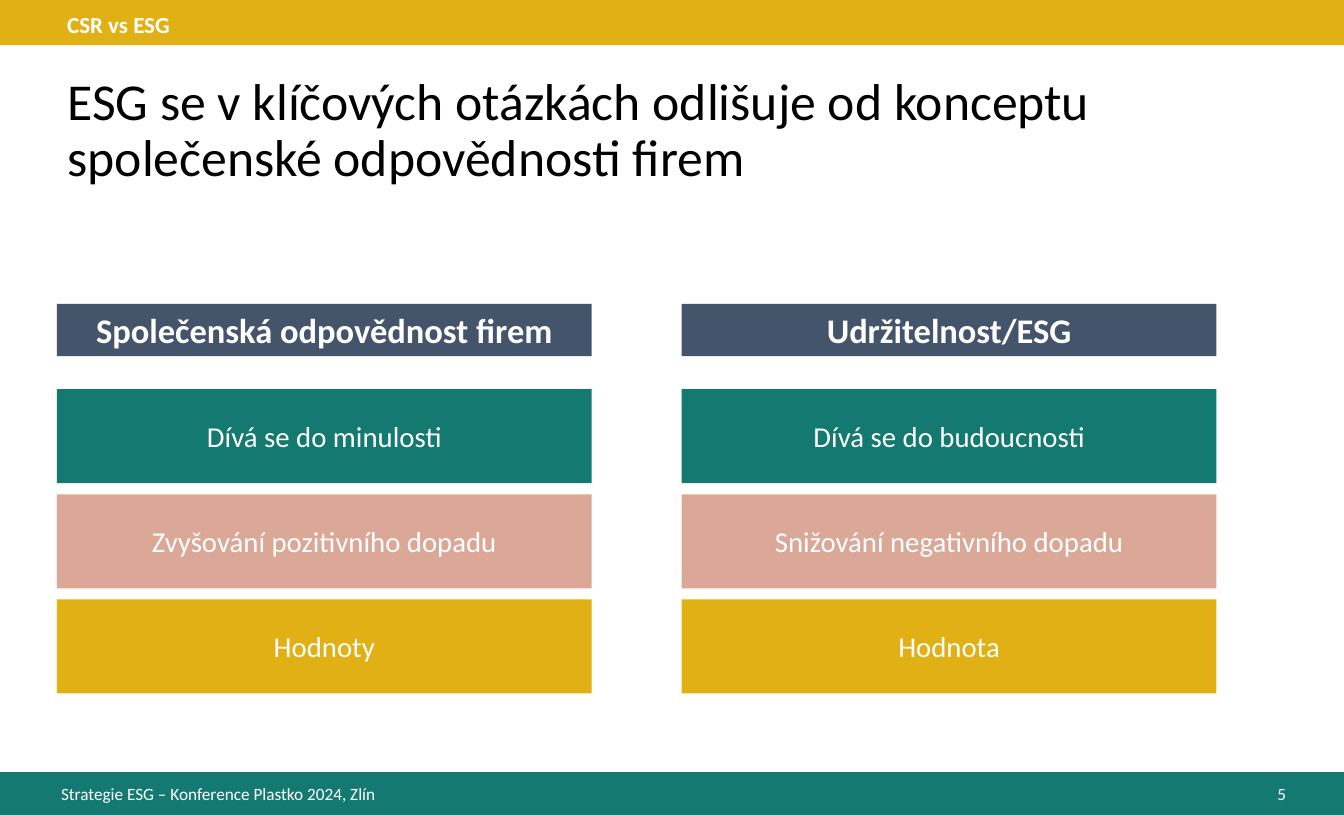
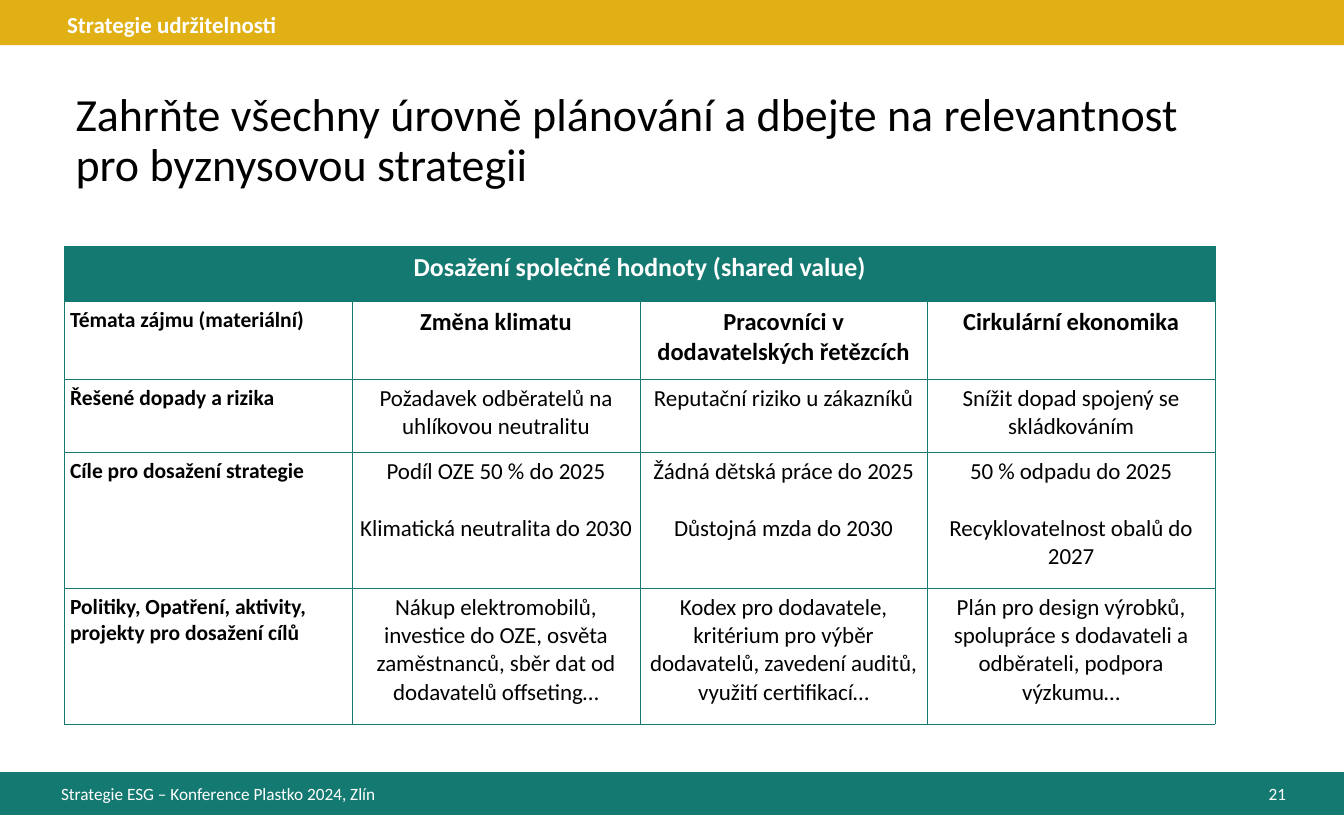
"""Build two slides on ESG strategy with shared bands, titles and footers."""
import pptx
import pptx.dml.color
import pptx.enum.shapes
import pptx.enum.text
import pptx.oxml
import pptx.oxml.ns
import pptx.util

Cm = pptx.util.Cm
Pt = pptx.util.Pt
ALIGN = pptx.enum.text.PP_ALIGN
ANCHOR = pptx.enum.text.MSO_ANCHOR

COLORS = {
    "teal": "147970",
    "gold": "E1B015",
    "rose": "DBA898",
    "slate": "44546A",
    "white": "FFFFFF",
    "black": "000000",
}


class Deck:
    """Hold the shared style and the current slide."""

    font = "Calibri"
    width, height = 33, 20
    left = 1.4
    footer = "Strategie ESG – Konference Plastko 2024, Zlín"

    def __init__(self):
        self.prs = pptx.Presentation()
        self.prs.slide_width = Cm(self.width)
        self.prs.slide_height = Cm(self.height)
        self.s = None

    def color(self, name):
        return pptx.dml.color.RGBColor.from_string(COLORS[name])

    def add_lines(self, tf, lines, size, color="white", bold=False,
                  align=ALIGN.LEFT, spacing=None, gap=0):
        for i, line in enumerate(lines):
            p = tf.paragraphs[0] if i == 0 else tf.add_paragraph()
            p.alignment = align
            if spacing:
                p.line_spacing = spacing
            if i and gap:
                p.space_before = Pt(gap)
            r = p.add_run()
            r.text = line
            r.font.name = self.font
            r.font.size = Pt(size)
            r.font.bold = bold
            r.font.color.rgb = self.color(color)

    def text(self, x, y, w, h, line, size, anchor=ANCHOR.TOP, inset=None, **style):
        tf = self.s.shapes.add_textbox(Cm(x), Cm(y), Cm(w), Cm(h)).text_frame
        tf.word_wrap = True
        tf.vertical_anchor = anchor
        if inset is not None:
            tf.margin_left = tf.margin_right = Cm(inset)
            tf.margin_top = tf.margin_bottom = 0
        self.add_lines(tf, [line], size, **style)

    def box(self, x, y, w, h, fill, line=None, size=20, bold=False):
        sp = self.s.shapes.add_shape(
            pptx.enum.shapes.MSO_SHAPE.RECTANGLE, Cm(x), Cm(y), Cm(w), Cm(h))
        sp.shadow.inherit = False
        sp.fill.solid()
        sp.fill.fore_color.rgb = self.color(fill)
        sp.line.fill.background()
        if line:
            tf = sp.text_frame
            tf.word_wrap = True
            tf.vertical_anchor = ANCHOR.MIDDLE
            self.add_lines(tf, [line], size, bold=bold, align=ALIGN.CENTER)

    def slide(self, section, number):
        self.s = self.prs.slides.add_slide(self.prs.slide_layouts.get_by_name("Title Only"))
        self.box(0, 18.95, self.width, 1.05, "teal")
        self.box(0, 0, self.width, 1.11, "gold")
        self.text(self.left, 19.23, 10.82, 0.5, self.footer, 12, inset=0.1)
        self.text(30.15, 19.15, 1.68, 0.66, number, 12,
                  anchor=ANCHOR.MIDDLE, align=ALIGN.RIGHT)
        self.text(self.left, 0.2, 24.74, 0.84, section, 16, bold=True, spacing=0.9)

    def title(self, x, y, line, size, anchor):
        sp = self.s.shapes.title
        sp.left, sp.top, sp.width, sp.height = Cm(x), Cm(y), Cm(28.47), Cm(3.18)
        tf = sp.text_frame
        tf.auto_size = pptx.enum.text.MSO_AUTO_SIZE.NONE
        tf.word_wrap = True
        tf.vertical_anchor = anchor
        self.add_lines(tf, [line], size, color="black", spacing=0.9)

    def border(self, cell, color, width):
        tc_pr = cell._tc.get_or_add_tcPr()
        for i, side in enumerate(("lnL", "lnR", "lnT", "lnB")):
            ln = pptx.oxml.parse_xml(
                f'<a:{side} {pptx.oxml.ns.nsdecls("a")} w="{Pt(width)}">'
                f'<a:solidFill><a:srgbClr val="{COLORS[color]}"/></a:solidFill>'
                f'</a:{side}>')
            tc_pr.insert(i, ln)

    def cell(self, cell, lines, size, fill=None, **style):
        cell.margin_left = cell.margin_right = Cm(0.13)
        cell.margin_top = cell.margin_bottom = Cm(0.13)
        cell.vertical_anchor = ANCHOR.TOP
        if fill:
            cell.fill.solid()
            cell.fill.fore_color.rgb = self.color(fill)
        else:
            cell.fill.background()
        self.border(cell, "teal", 0.5)
        self.add_lines(cell.text_frame, lines, size, **style)

    def table(self, x, y, col_width, row_heights, heading, rows):
        n_cols = len(rows[0])
        table = self.s.shapes.add_table(
            len(row_heights), n_cols, Cm(x), Cm(y),
            Cm(col_width * n_cols), Cm(sum(row_heights))).table
        table.horz_banding = False
        for col in table.columns:
            col.width = Cm(col_width)
        for row, height in zip(table.rows, row_heights):
            row.height = Cm(height)
        for j in range(n_cols):
            self.cell(table.cell(0, j), [heading] if j == 0 else [], 18,
                      fill="teal", bold=True, align=ALIGN.CENTER)
        table.cell(0, 0).merge(table.cell(0, n_cols - 1))
        for i, row in enumerate(rows, 1):
            for j, lines in enumerate(row):
                if j == 0:
                    size, bold, align = 15, True, ALIGN.LEFT
                else:
                    size, bold, align = (17 if i == 1 else 16), i == 1, ALIGN.CENTER
                self.cell(table.cell(i, j), lines, size, color="black",
                          bold=bold, align=align, gap=19.5)


def comparison(deck):
    deck.slide("CSR vs ESG", "5")
    deck.title(deck.left, 1.65, "ESG se v klíčových otázkách odlišuje od konceptu "
               "společenské odpovědnosti firem", 36, ANCHOR.MIDDLE)
    columns = [
        ("Společenská odpovědnost firem",
         ["Dívá se do minulosti", "Zvyšování pozitivního dopadu", "Hodnoty"]),
        ("Udržitelnost/ESG",
         ["Dívá se do budoucnosti", "Snižování negativního dopadu", "Hodnota"]),
    ]
    for i, (heading, cards) in enumerate(columns):
        x = deck.left + i * 15.34
        deck.box(x, 7.46, 13.13, 1.28, "slate", heading, 24, True)
        for j, (card, fill) in enumerate(zip(cards, ("teal", "rose", "gold"))):
            deck.box(x, 9.55 + j * 2.58, 13.13, 2.31, fill, card)


def planning(deck):
    deck.slide("Strategie udržitelnosti", "21")
    deck.title(1.6, 2.13, "Zahrňte všechny úrovně plánování a dbejte na relevantnost "
               "pro byznysovou strategii", 32, ANCHOR.TOP)
    rows = [
        [["Témata zájmu (materiální)"], ["Změna klimatu"],
         ["Pracovníci v dodavatelských řetězcích"], ["Cirkulární ekonomika"]],
        [["Řešené dopady a rizika"], ["Požadavek odběratelů na uhlíkovou neutralitu"],
         ["Reputační riziko u zákazníků"], ["Snížit dopad spojený se skládkováním"]],
        [["Cíle pro dosažení strategie"],
         ["Podíl OZE 50 % do 2025", "Klimatická neutralita do 2030"],
         ["Žádná dětská práce do 2025", "Důstojná mzda do 2030"],
         ["50 % odpadu do 2025", "Recyklovatelnost obalů do 2027"]],
        [["Politiky, Opatření, aktivity, projekty pro dosažení cílů"],
         ["Nákup elektromobilů, investice do OZE, osvěta zaměstnanců, "
          "sběr dat od dodavatelů offseting…"],
         ["Kodex pro dodavatele, kritérium pro výběr dodavatelů, "
          "zavedení auditů, využití certifikací…"],
         ["Plán pro design výrobků, spolupráce s dodavateli a odběrateli, "
          "podpora výzkumu…"]],
    ]
    deck.table(1.59, 6.05, 7.06, [1.35, 1.91, 1.8, 3.33, 3.33],
               "Dosažení společné hodnoty (shared value)", rows)


def main():
    deck = Deck()
    comparison(deck)
    planning(deck)
    deck.prs.save("out.pptx")


if __name__ == "__main__":
    main()
